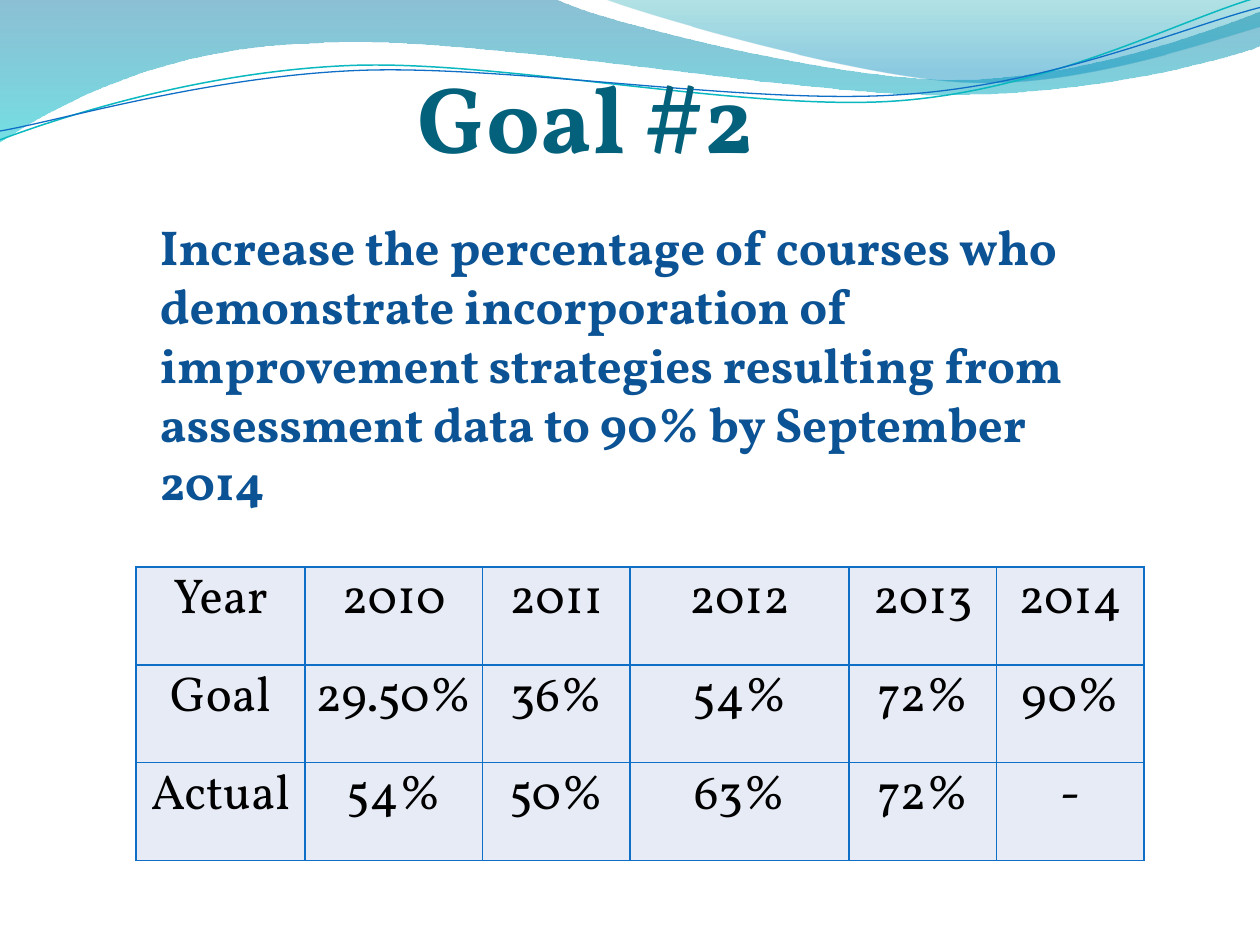
import math

import lxml.etree
import pptx
import pptx.dml.color
import pptx.enum.text
import pptx.oxml
import pptx.oxml.ns
import pptx.util

Inches = pptx.util.Inches
Pt = pptx.util.Pt
RGB = pptx.dml.color.RGBColor.from_string
qn = pptx.oxml.ns.qn
CENTER = pptx.enum.text.PP_ALIGN.CENTER
LEFT = pptx.enum.text.PP_ALIGN.LEFT
FONT = "Vollkorn"
COLORS = {
    "title": "04617B", "statement": "0B5394", "cell_text": "000000",
    "cell": "E7EBF5", "border": "0F6FC6",
    "wave_top": "0074A1", "wave_bottom": "00C6CF",
    "crest_top": "00A1A9", "crest_bottom": "008BBF",
    "teal_line": "0AB8BF", "blue_line": "0F6FC6",
}


def draw_curve(page, start, segments, close, tilt=0, center=(0, 0)):
    """Draw lines (2 numbers) and Bezier curves (6 numbers), in inches."""
    points = [start]
    for segment in segments:
        points += zip(segment[::2], segment[1::2])
    # Level the points about the center; the shape's rotation tilts them again
    cos, sin = math.cos(math.radians(-tilt)), math.sin(math.radians(-tilt))
    cx, cy = center
    points = [(Inches(cx + (x - cx) * cos - (y - cy) * sin),
               Inches(cy + (x - cx) * sin + (y - cy) * cos)) for x, y in points]
    builder = page.shapes.build_freeform(*points[0])
    builder.add_line_segments(points[1:], close=close)
    shape = builder.convert_to_shape()
    shape.rotation = tilt
    shape.shadow.inherit = False
    # Join each three line steps of a curve into one Bezier step
    steps = iter(list(shape._element.iter(qn("a:lnTo"))))
    for segment in segments:
        first = next(steps)
        if len(segment) == 6:
            first.tag = qn("a:cubicBezTo")
            for step in (next(steps), next(steps)):
                first.append(step[0])
                step.getparent().remove(step)
    return shape


def write_text(frame, text, align, size, color, bold=False):
    """Write one formatted paragraph and return its run."""
    para = frame.paragraphs[0]
    para.alignment = align
    span = para.add_run()
    span.text = text
    for name, value in {"name": FONT, "size": Pt(size), "bold": bold}.items():
        setattr(span.font, name, value)
    span.font.color.rgb = RGB(COLORS[color])
    return span


deck = pptx.Presentation()
deck.slide_width, deck.slide_height = Inches(10), Inches(7.5)
page = deck.slides.add_slide(deck.slide_layouts[5])

# Translucent waves: start, segments, gradient stops (position, colour, opacity)
waves = [
    ((0, 0),
     [(4.4, -0.01), (4.76, 0.17, 6.64, 0.63, 7.58, 0.63), (8.53, 0.63, 9.58, 0.26, 10, 0.09),
      (10.01, 0.36), (9.83, 0.44, 8.7, 0.76, 7.46, 0.75), (6.22, 0.75, 3.82, 0.28, 2.57, 0.34),
      (1.29, 0.36, 0.46, 0.83, -0.01, 1.13)],
     [(0, "wave_top", 45), (1, "wave_bottom", 55)]),
    ((4.79, -0.01),
     [(5.09, 0.11, 6.82, 0.62, 7.69, 0.65), (8.56, 0.69, 9.61, 0.32, 10, 0.21), (10, 0)],
     [(0, "crest_top", 30), (0.8, "crest_bottom", 45)]),
]
for start, segments, stops in waves:
    wave = draw_curve(page, start, segments, True)
    wave.line.fill.background()
    wave.fill.gradient()
    wave.fill.gradient_angle = 270
    for stop, (position, color, opacity) in zip(wave.fill.gradient_stops, stops):
        stop.position = position
        stop.color.rgb = RGB(COLORS[color])
    for tint, (position, color, opacity) in zip(wave._element.spPr.iter(qn("a:srgbClr")), stops):
        lxml.etree.SubElement(tint, qn("a:alpha")).set("val", str(opacity * 1000))

# Thin tilted wave lines
lines = [
    ((0, 1.11),
     [(0.48, 0.93, 1.58, 0.57, 2.77, 0.52), (3.95, 0.47, 5.93, 0.89, 7.13, 0.8),
      (8.33, 0.71, 9.38, 0.15, 9.98, -0.02)], (4.99, 0.57), "teal_line", 0.85),
    ((0, 1.04),
     [(0.47, 0.96, 1.64, 0.61, 2.83, 0.56), (4.03, 0.51, 5.97, 0.84, 7.17, 0.75),
      (8.36, 0.67, 9.41, 0.21, 10, 0.06)], (5, 0.59), "blue_line", 0.75),
]
for start, segments, center, color, width in lines:
    curve = draw_curve(page, start, segments, False, -2.7, center)
    curve.fill.background()
    curve.line.color.rgb = RGB(COLORS[color])
    curve.line.width = Pt(width)

# Goal statement and title, in front of the waves
statement = page.shapes.add_textbox(Inches(1.17), Inches(1.67), Inches(7.92), Inches(1.99))
write_text(statement.text_frame,
           "Increase the percentage of courses who demonstrate incorporation of improvement "
           "strategies resulting from assessment data to 90% by September 2014",
           LEFT, 28, "statement", True)

title = page.shapes.title
page.shapes._spTree.append(title._element)
place = {"left": 3.21, "top": 0.42, "width": 2.88, "height": 1.01}
for name, value in place.items():
    setattr(title, name, Inches(value))
heading = write_text(title.text_frame, "Goal #2", CENTER, 54, "title", True)
heading.font._element.set("spc", "50")

frame_format = {"auto_size": pptx.enum.text.MSO_AUTO_SIZE.SHAPE_TO_FIT_TEXT,
                "vertical_anchor": pptx.enum.text.MSO_ANCHOR.TOP}
for box, wrap in ((statement, True), (title, False)):
    for name, value in {**frame_format, "word_wrap": wrap}.items():
        setattr(box.text_frame, name, value)

# Goal and actual values by year
rows = [
    ["Year", "2010", "2011", "2012", "2013", "2014"],
    ["Goal", "29.50%", "36%", "54%", "72%", "90%"],
    ["Actual", "54%", "50%", "63%", "72%", "-"],
]
widths = [1.34, 1.41, 1.17, 1.74, 1.17, 1.17]
table_height = 2.33
table = page.shapes.add_table(len(rows), len(widths), Inches(1.08), Inches(4.5),
                              Inches(sum(widths)), Inches(table_height)).table
table.first_row = table.horz_banding = False
for column, width in zip(table.columns, widths):
    column.width = Inches(width)
cell_format = {"margin_left": Inches(0.07), "margin_right": Inches(0.07),
               "margin_top": 0, "margin_bottom": 0}
for r, values in enumerate(rows):
    table.rows[r].height = Inches(table_height / len(rows))
    for c, value in enumerate(values):
        cell = table.cell(r, c)
        for name, setting in cell_format.items():
            setattr(cell, name, setting)
        write_text(cell.text_frame, value, CENTER, 28, "cell_text")
        properties = cell._tc.get_or_add_tcPr()
        for side in ("a:lnL", "a:lnR", "a:lnT", "a:lnB"):
            border = lxml.etree.SubElement(properties, qn(side), w=str(Pt(1)))
            fill = lxml.etree.SubElement(border, qn("a:solidFill"))
            lxml.etree.SubElement(fill, qn("a:srgbClr"), val=COLORS["border"])
        cell.fill.solid()
        cell.fill.fore_color.rgb = RGB(COLORS["cell"])

deck.save("out.pptx")
